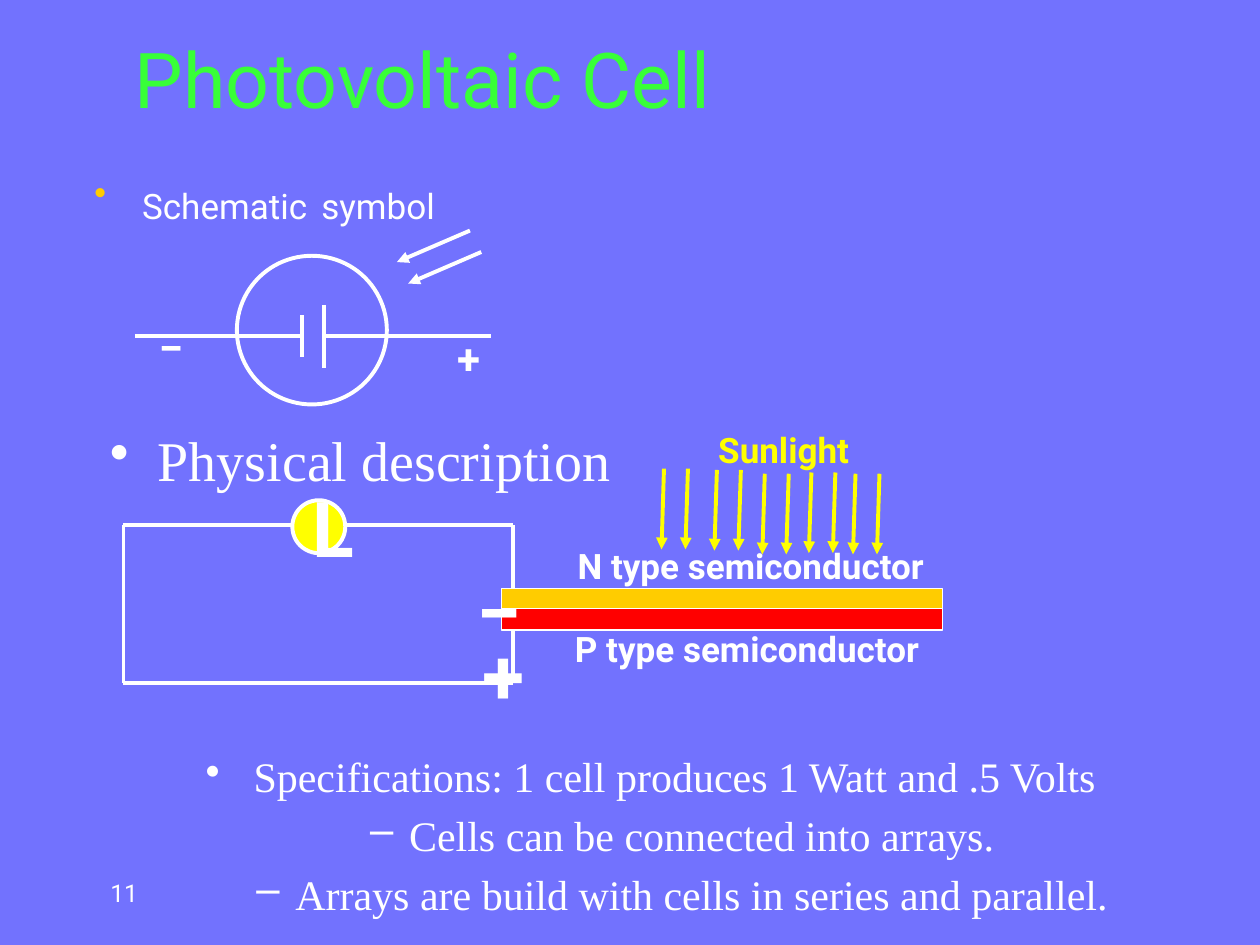
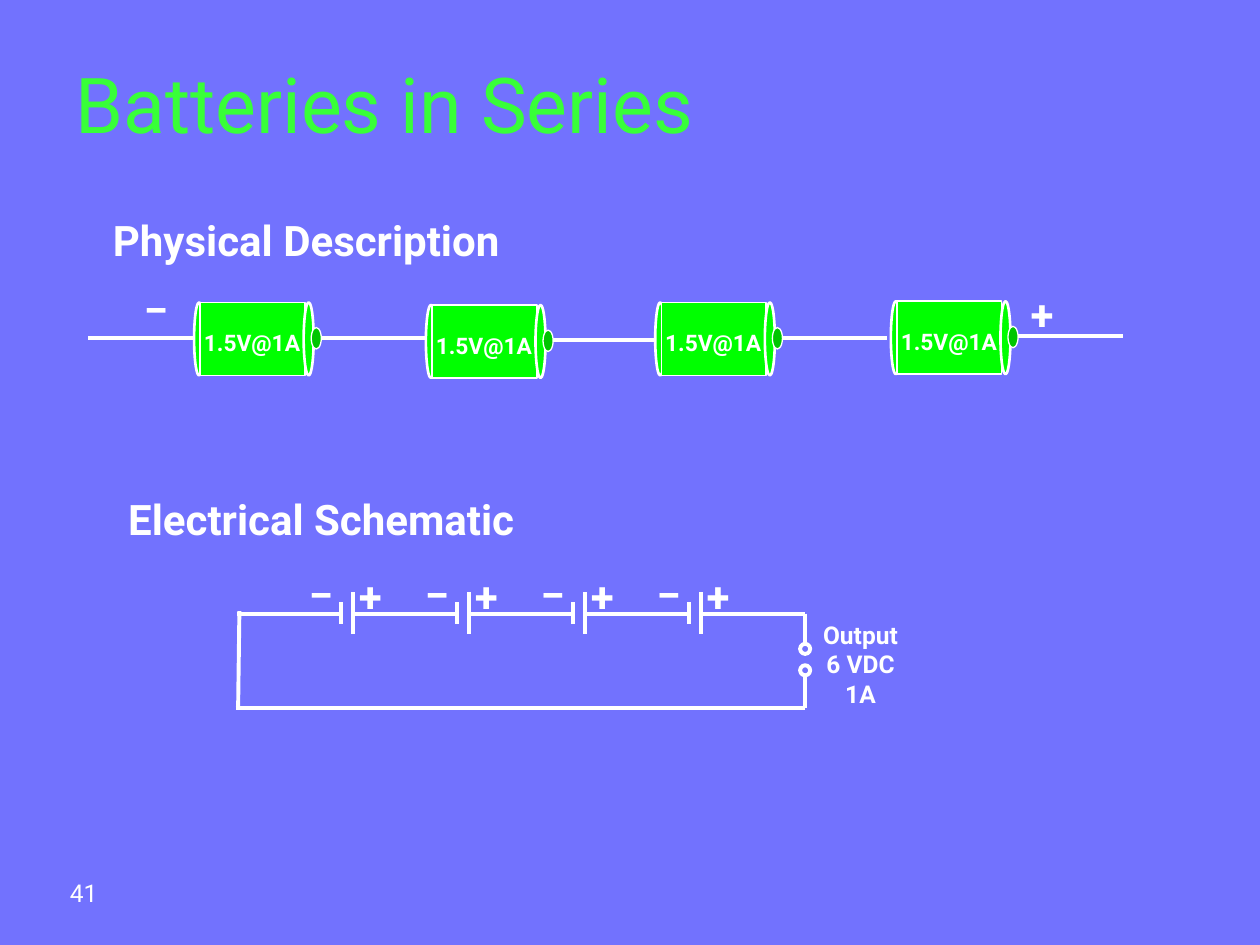
from dataclasses import dataclass
from typing import Any

from lxml import etree
from pptx import Presentation
from pptx import util as u
from pptx.dml.color import RGBColor
from pptx.enum import shapes, text
from pptx.oxml import ns

BLUE = RGBColor(0x72, 0x72, 0xFE)
TITLE_GREEN = RGBColor(0x38, 0xFF, 0x38)
WHITE = RGBColor(0xFF, 0xFF, 0xFF)
YELLOW = RGBColor(0xFF, 0xFF, 0x00)
GOLD = RGBColor(0xFF, 0xCC, 0x00)
RED = RGBColor(0xFF, 0x00, 0x00)
BATTERY_GREEN = RGBColor(0x00, 0xFF, 0x00)
TIP_GREEN = RGBColor(0x00, 0xC6, 0x00)

SANS = "Roboto"
SERIF = "Times New Roman"
OVAL = shapes.MSO_SHAPE.OVAL
RECTANGLE = shapes.MSO_SHAPE.RECTANGLE
LEFT, CENTER = text.PP_ALIGN.LEFT, text.PP_ALIGN.CENTER
TOP, MIDDLE, BOTTOM = (text.MSO_ANCHOR.TOP, text.MSO_ANCHOR.MIDDLE,
                       text.MSO_ANCHOR.BOTTOM)
# Bullet mark: level, left margin in inches, first-line indent in inches
BULLET_STYLES = {"•": (0, 0.38, -0.38), "–": (1, 0.81, -0.31)}


def add_child(parent, tag, **attributes):
    return etree.SubElement(parent, ns.qn(tag), attributes)


def set_bullet(para, mark, color):
    para.level, margin, indent = BULLET_STYLES[mark]
    properties = para._p.get_or_add_pPr()
    properties.set("marL", str(u.Inches(margin)))
    properties.set("indent", str(u.Inches(indent)))
    add_child(add_child(properties, "a:buClr"), "a:srgbClr", val=str(color))
    add_child(properties, "a:buChar", char=mark)


def fill_text(frame, words, size=24, font=SANS, color=WHITE, bold=False,
              align=CENTER, anchor=TOP, marks="", mark_color=WHITE,
              space_before=0, gap_size=None):
    """Write one paragraph per line; gap_size sets the size of the first space."""
    frame.word_wrap = True
    frame.vertical_anchor = anchor
    for index, line in enumerate(words.split("\n")):
        para = frame.add_paragraph() if index else frame.paragraphs[0]
        para.alignment = align
        if marks:
            set_bullet(para, marks[index], mark_color)
        if index and space_before:
            para.space_before = u.Pt(space_before)
        for piece in line.partition(" ") if gap_size else [line]:
            span = para.add_run()
            span.text = piece
            span.font.name = font
            span.font.size = u.Pt(gap_size if piece == " " else size)
            span.font.bold = bold
            span.font.color.rgb = color


@dataclass
class Region:
    """Part of a page; everything in it is placed from its top left corner."""
    page: Any
    left: float = 0
    top: float = 0

    def at(self, x, y):
        return u.Inches(self.left + x), u.Inches(self.top + y)

    def line(self, x1, y1, x2, y2, color=WHITE, arrow=False):
        connector = self.page.shapes.add_connector(
            shapes.MSO_CONNECTOR.STRAIGHT, *self.at(x1, y1), *self.at(x2, y2))
        connector.line.color.rgb = color
        connector.line.width = u.Pt(2.25)
        if arrow:
            add_child(connector.line._get_or_add_ln(), "a:tailEnd", type="triangle")
        add_child(connector._element.spPr, "a:effectLst")

    def shape(self, kind, x, y, width, height, fill=None, weight=2.25):
        shape = self.page.shapes.add_shape(
            kind, *self.at(x, y), u.Inches(width), u.Inches(height))
        shape.shadow.inherit = False
        if fill is None:
            shape.fill.background()
        else:
            shape.fill.solid()
            shape.fill.fore_color.rgb = fill
        shape.line.color.rgb = WHITE
        shape.line.width = u.Pt(weight)
        return shape

    def text(self, words, x, y, width, height, **style):
        box = self.page.shapes.add_textbox(
            *self.at(x, y), u.Inches(width), u.Inches(height))
        fill_text(box.text_frame, words, **style)

    def sign(self, mark, x, y):
        self.text(mark, x, y, 0.4, 0.5, bold=True)


def add_page(deck, title, title_box, number, number_left):
    page = deck.slides.add_slide(deck.slide_layouts[6])
    page.background.fill.solid()
    page.background.fill.fore_color.rgb = BLUE
    whole = Region(page)
    whole.text(number, number_left, 6.75, 0.67, 0.5, size=14, anchor=BOTTOM)
    whole.text(title, *title_box, size=44, color=TITLE_GREEN, align=LEFT,
               anchor=MIDDLE)
    return page


def draw_cell_symbol(page, left, top):
    symbol = Region(page, left, top)
    symbol.shape(OVAL, 0.81, 0.2, 1.19, 1.18)
    for wire_start in (0, 1.5):
        symbol.line(wire_start, 0.84, wire_start + 1.33, 0.84)
    symbol.line(1.33, 0.67, 1.33, 1)
    symbol.line(1.5, 0.59, 1.5, 1.09)
    for x, y in ((2.66, 0), (2.75, 0.17)):
        symbol.line(x, y, x - 0.58, y + 0.25, arrow=True)
    symbol.sign("+", 2.45, 0.76)
    symbol.sign("_", 0.09, 0.54)


def draw_lamp_circuit(page, left, top):
    circuit = Region(page, left, top)
    right, bottom = 3.09, 1.25
    circuit.line(0, 0, 0, bottom)
    circuit.line(0, 0, 1.34, 0)
    lamp = circuit.shape(OVAL, 1.34, -0.2, 0.42, 0.42, fill=YELLOW)
    fill_text(lamp.text_frame, "L", size=44, bold=True, anchor=MIDDLE)
    circuit.line(1.75, 0, right, 0)
    circuit.line(0, bottom, right, bottom)
    circuit.line(right, 0, right, 0.5)
    circuit.line(right, 0.75, right, bottom)
    for y, layer in ((0.5, GOLD), (0.66, RED)):
        circuit.shape(RECTANGLE, 3, y, 3.5, 0.17, fill=layer, weight=0.75)
    for mark, y in (("_", 0.01), ("+", 0.76)):
        circuit.text(mark, 2.75, y, 0.35, 0.4, size=44, bold=True)
    for kind, x, y in (("P", 3.32, 0.76), ("N", 3.35, 0.1)):
        circuit.text(f"{kind} type semiconductor", x, y, 3.26, 0.44, size=20,
                     bold=True)


def draw_sunlight(page, left, top):
    sunlight = Region(page, left, top)
    pair_starts = ((0.02, 0.37), (0.44, 0.38), (0.82, 0.41), (1.19, 0.4),
                   (1.54, 0.41))
    for x, y in pair_starts:
        for ray in (x, x + 0.19):
            sunlight.line(ray, y, ray - 0.02, y + 0.64, color=YELLOW, arrow=True)
    sunlight.text("Sunlight", 0.28, 0, 1.38, 0.44, size=20, color=YELLOW,
                  bold=True)


def draw_battery(page, left, top):
    battery = Region(page, left, top)
    battery.shape(OVAL, 0, 0, 0.08, 0.58, fill=BATTERY_GREEN, weight=1.5)
    battery.shape(RECTANGLE, 0.05, 0, 0.83, 0.58, fill=BATTERY_GREEN, weight=1)
    battery.shape(OVAL, 0.87, 0, 0.08, 0.58, fill=BATTERY_GREEN, weight=1.5)
    battery.shape(OVAL, 0.93, 0.2, 0.08, 0.17, fill=TIP_GREEN, weight=0.75)
    battery.text("1.5V@1A", -0.03, 0.16, 0.98, 0.32, size=13, bold=True)
    battery.line(1.01, 0.28, 1.84, 0.28)


def draw_battery_row(page, left, top):
    row = Region(page, left, top)
    row.line(0, 0.29, 0.83, 0.29)
    for x, y in ((0.84, 0.01), (2.68, 0.03), (4.5, 0.01), (6.37, 0)):
        draw_battery(page, left + x, top + y)
    row.sign("_", 0.34, -0.32)
    row.sign("+", 7.37, -0.15)


def draw_series_schematic(page, left, top):
    circuit = Region(page, left, top)
    pitch, wire, right, bottom = 0.92, 0.83, 4.5, 0.75
    for cell in range(5):
        start = cell * pitch
        circuit.line(start, 0, start + wire, 0)
        if cell == 4:
            break
        plate = start + wire
        circuit.line(plate, -0.09, plate, 0.08)
        circuit.line(plate + 0.09, -0.17, plate + 0.09, 0.16)
        circuit.sign("_", plate - 0.36, -0.54)
        circuit.sign("+", plate + 0.03, -0.39)
    circuit.line(0.02, -0.02, 0.01, bottom)
    circuit.line(-0.01, bottom, right + 0.01, bottom)
    circuit.line(right + 0.01, 0, right + 0.01, 0.25)
    circuit.line(right + 0.01, 0.5, right + 0.01, bottom)
    for terminal in (0.24, 0.41):
        circuit.shape(OVAL, right - 0.03, terminal, 0.08, 0.08)
    circuit.text("Output\n6 VDC\n1A", right + 0.03, 0, 0.84, 0.8, size=14, bold=True)


def build_photovoltaic_page(deck):
    page = add_page(deck, "Photovoltaic Cell", (0.97, 0.32, 8.53, 0.6), "11", 0.65)
    whole = Region(page)
    whole.text("Schematic symbol", 0.65, 1.25, 4, 0.67, size=20, gap_size=32,
               align=LEFT, marks="•", mark_color=GOLD)
    draw_cell_symbol(page, 1.07, 1.83)
    whole.text("Physical description", 0.65, 3.33, 4.42, 0.67, size=32,
               font=SERIF, marks="•")
    draw_lamp_circuit(page, 0.98, 4.17)
    draw_sunlight(page, 5.25, 3.35)
    whole.text("Specifications: 1 cell produces 1 Watt and .5 Volts\n"
               "Cells can be connected into arrays.\n"
               "Arrays are build with cells in series and parallel.",
               0.33, 5.91, 9.67, 1.09, font=SERIF, marks="•––", space_before=4.8)


def build_series_page(deck):
    page = add_page(deck, "Batteries in Series", (0.5, 0.32, 9, 0.99), "41", 0.33)
    whole = Region(page)
    whole.text("Physical Description", 0.69, 1.65, 3.48, 0.5, bold=True)
    draw_battery_row(page, 0.7, 2.39)
    whole.text("Electrical Schematic", 0.83, 3.87, 3.44, 0.5, bold=True)
    draw_series_schematic(page, 1.88, 4.87)


def main():
    deck = Presentation()
    deck.slide_width, deck.slide_height = u.Inches(10), u.Inches(7.5)
    build_photovoltaic_page(deck)
    build_series_page(deck)
    deck.save("out.pptx")


if __name__ == "__main__":
    main()
